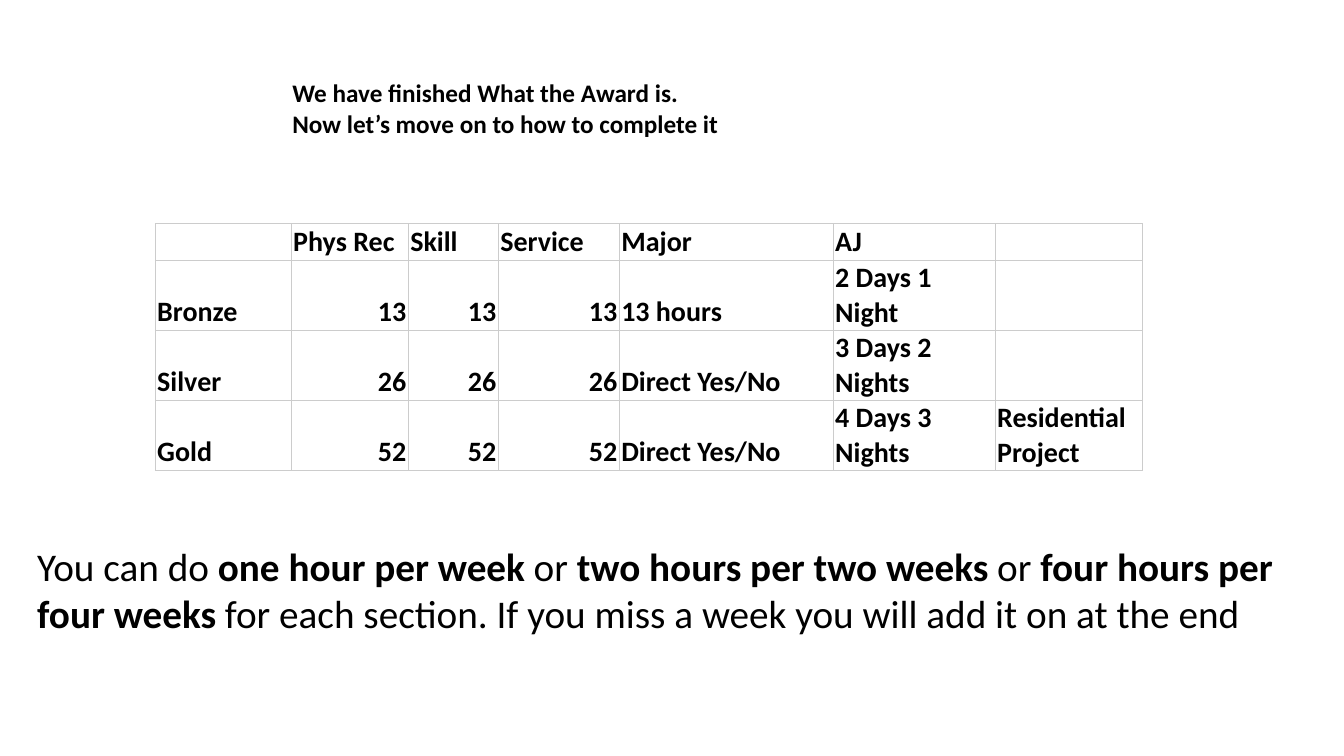
from dataclasses import dataclass

from lxml import etree
from pptx import Presentation
from pptx.dml.color import RGBColor
from pptx.enum.text import MSO_ANCHOR, MSO_AUTO_SIZE, PP_ALIGN
from pptx.oxml.ns import qn
from pptx.util import Inches, Pt

TOP, BOTTOM = MSO_ANCHOR.TOP, MSO_ANCHOR.BOTTOM
NO_AUTOFIT = MSO_AUTO_SIZE.NONE
LEFT, RIGHT = PP_ALIGN.LEFT, PP_ALIGN.RIGHT

SLIDE_WIDTH, SLIDE_HEIGHT = Inches(13.33), Inches(7.5)
TITLE_ONLY_LAYOUT = 5
FONT, INK, RULE = "Calibri", "000000", "CCCCCC"


@dataclass(frozen=True)
class Area:
    """A rectangle in percent of the slide's width and height."""
    left: float
    top: float
    width: float
    height: float


@dataclass(frozen=True)
class Phrase:
    text: str
    bold: bool = False


@dataclass(frozen=True)
class Column:
    """Width in percent of the slide's width."""
    heading: str
    width: float
    numeric: bool = False


HEADING_AREA = Area(21, 9.6, 71.64, 9.47)
ADVICE_AREA = Area(2.03, 71.07, 94.07, 13.87)
TABLE_LEFT, TABLE_TOP = 11.55, 29.6
HEADER_HEIGHT, LEVEL_HEIGHT = 4.8, 9.26

HEADING = (
    "We have finished What the Award is.",
    "Now let’s move on to how to complete it",
)
COLUMNS = (
    Column("", 10.12),
    Column("Phys Rec", 8.71, numeric=True),
    Column("Skill", 6.7, numeric=True),
    Column("Service", 9, numeric=True),
    Column("Major", 15.92),
    Column("AJ", 12.05),
    Column("", 10.94),
)
LEVELS = (
    ("Bronze", "13", "13", "13", "13 hours", "2 Days 1 Night", ""),
    ("Silver", "26", "26", "26", "Direct Yes/No", "3 Days 2 Nights", ""),
    ("Gold", "52", "52", "52", "Direct Yes/No", "4 Days 3 Nights",
     "Residential Project"),
)
ADVICE = (
    Phrase("You can do "),
    Phrase("one hour per week ", bold=True),
    Phrase("or "),
    Phrase("two hours per two weeks ", bold=True),
    Phrase("or "),
    Phrase("four hours per four weeks", bold=True),
    Phrase(" for each section. If you miss a week you will add it on at the end"),
)


def across(percent: float) -> int:
    return round(SLIDE_WIDTH * percent / 100)


def down(percent: float) -> int:
    return round(SLIDE_HEIGHT * percent / 100)


def color(hex_value: str) -> RGBColor:
    return RGBColor.from_string(hex_value)


def set_font(font, size: float, bold: bool | None = None) -> None:
    font.name, font.size, font.bold = FONT, Pt(size), bold
    font.color.rgb = color(INK)


def place(shape, area: Area) -> None:
    shape.left, shape.top = across(area.left), down(area.top)
    shape.width, shape.height = across(area.width), down(area.height)


def add_heading(slide) -> None:
    heading = slide.shapes.title
    place(heading, HEADING_AREA)
    frame = heading.text_frame
    frame.text = "\n".join(HEADING)
    frame.word_wrap, frame.auto_size = True, NO_AUTOFIT
    frame.vertical_anchor = TOP
    for paragraph in frame.paragraphs:
        paragraph.alignment = LEFT
        set_font(paragraph.font, 18, bold=True)


def add_advice(slide) -> None:
    advice = slide.shapes.add_textbox(0, 0, 0, 0)
    place(advice, ADVICE_AREA)
    advice.text_frame.word_wrap = True
    paragraph = advice.text_frame.paragraphs[0]
    set_font(paragraph.font, 28)
    for phrase in ADVICE:
        run = paragraph.add_run()
        run.text, run.font.bold = phrase.text, phrase.bold


def add_borders(cell) -> None:
    properties = cell._tc.get_or_add_tcPr()
    for side in ("a:lnL", "a:lnR", "a:lnT", "a:lnB"):
        line = etree.SubElement(properties, qn(side), w=str(Pt(0.5)))
        fill = etree.SubElement(line, qn("a:solidFill"))
        etree.SubElement(fill, qn("a:srgbClr"), val=RULE)


def fill_cell(cell, text: str, alignment: PP_ALIGN) -> None:
    cell.text = text
    cell.vertical_anchor = BOTTOM
    cell.margin_left = cell.margin_right = Inches(0.02)
    cell.margin_top = cell.margin_bottom = Inches(0.01)
    add_borders(cell)
    cell.fill.background()
    paragraph = cell.text_frame.paragraphs[0]
    paragraph.alignment = alignment
    set_font(paragraph.font, 20, bold=True)


def add_requirements(slide) -> None:
    rows = (tuple(column.heading for column in COLUMNS), *LEVELS)
    heights = [HEADER_HEIGHT] + [LEVEL_HEIGHT] * len(LEVELS)
    table = slide.shapes.add_table(
        len(rows), len(COLUMNS), across(TABLE_LEFT), down(TABLE_TOP),
        across(sum(column.width for column in COLUMNS)), down(sum(heights)),
    ).table
    table.first_row = table.horz_banding = False
    for index, column in enumerate(COLUMNS):
        table.columns[index].width = across(column.width)
    for row_index, (row, height) in enumerate(zip(rows, heights)):
        table.rows[row_index].height = down(height)
        for index, (text, column) in enumerate(zip(row, COLUMNS)):
            alignment = RIGHT if column.numeric and row_index else LEFT
            fill_cell(table.cell(row_index, index), text, alignment)


def main() -> None:
    presentation = Presentation()
    presentation.slide_width = SLIDE_WIDTH
    presentation.slide_height = SLIDE_HEIGHT
    layout = presentation.slide_layouts[TITLE_ONLY_LAYOUT]
    slide = presentation.slides.add_slide(layout)
    add_heading(slide)
    add_advice(slide)
    add_requirements(slide)
    presentation.save("out.pptx")


if __name__ == "__main__":
    main()
